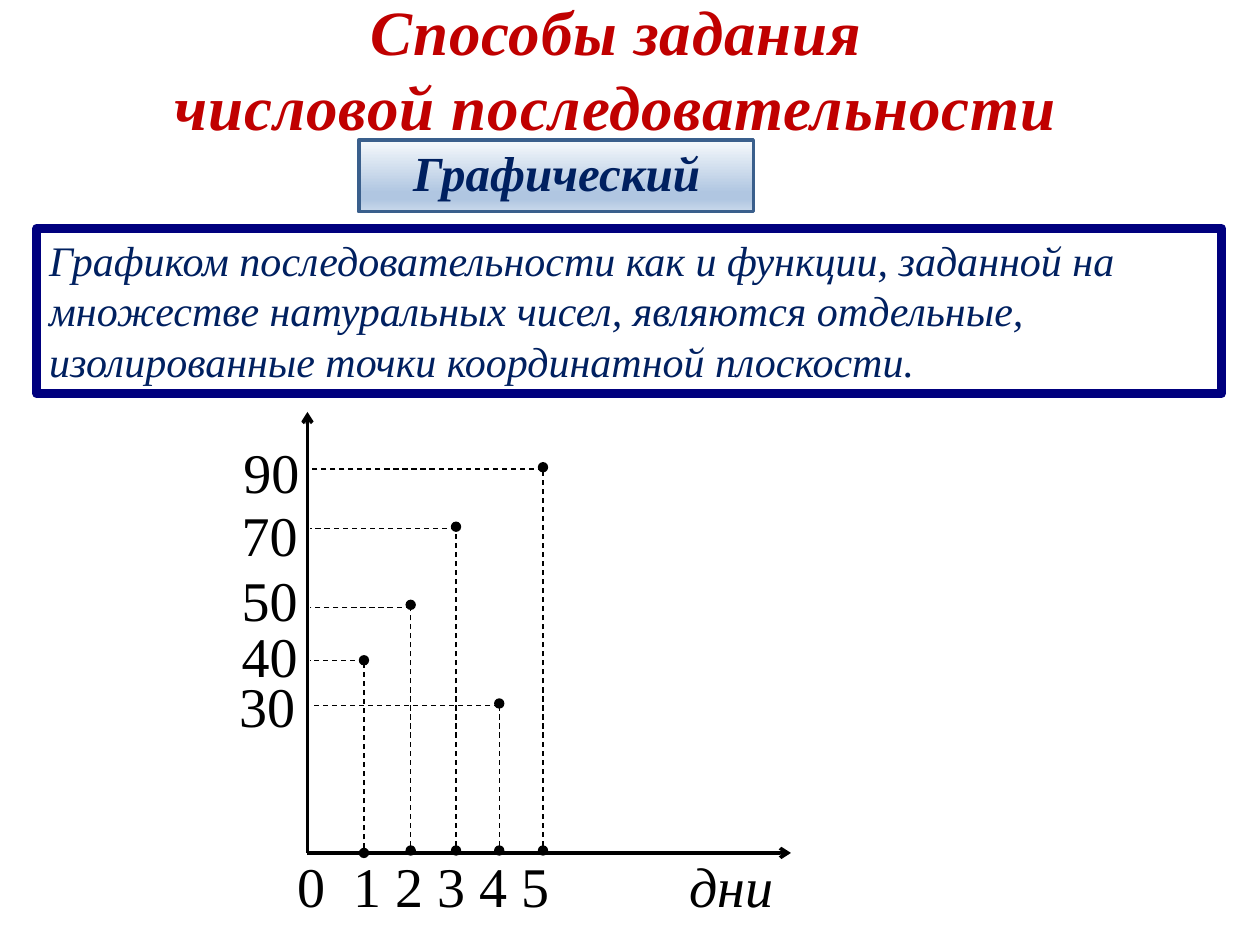
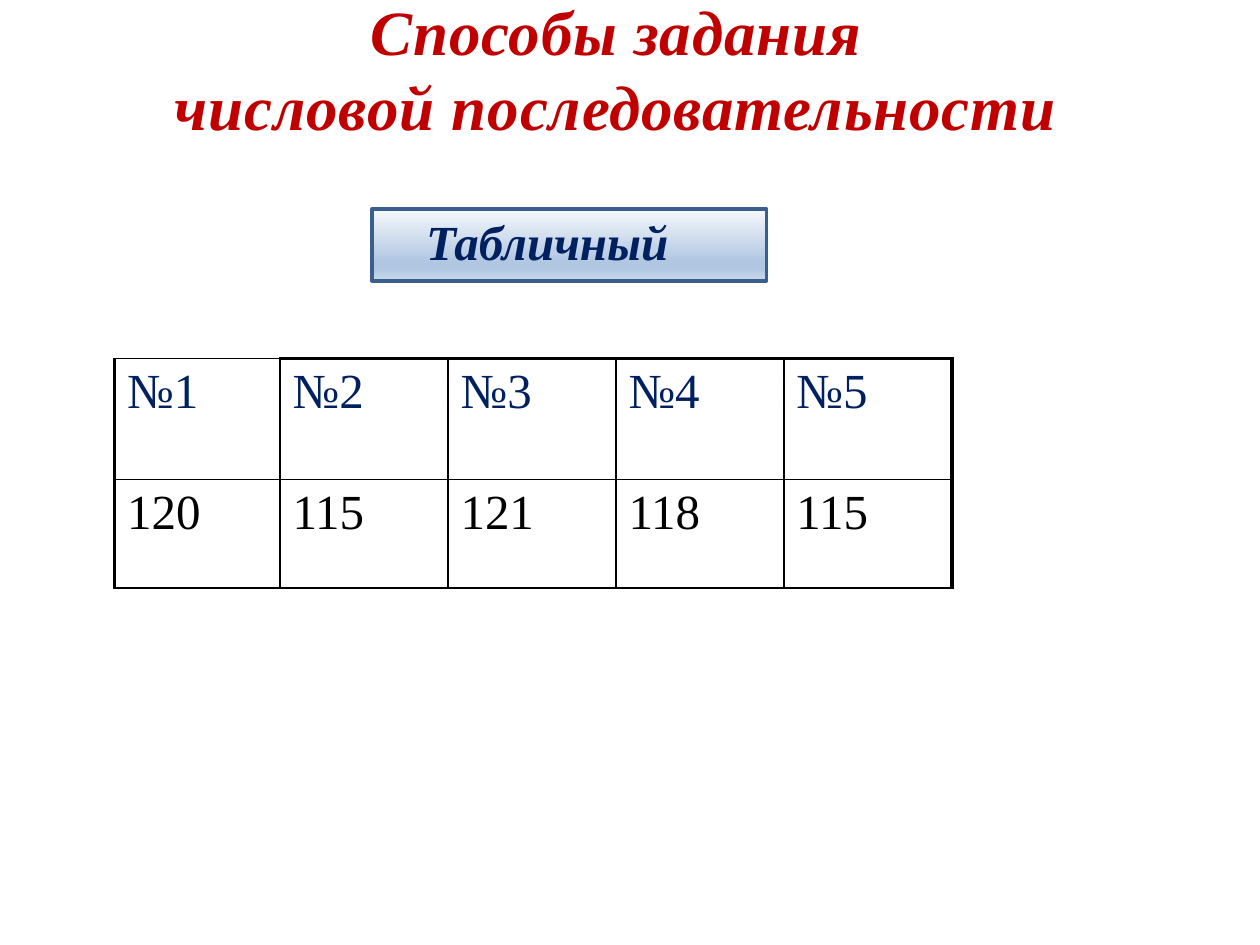
from lxml import etree
from pptx import Presentation
from pptx.dml.color import RGBColor
from pptx.enum.dml import MSO_LINE
from pptx.enum.shapes import MSO_CONNECTOR, MSO_SHAPE
from pptx.enum.text import MSO_ANCHOR, MSO_AUTO_SIZE, PP_ALIGN
from pptx.oxml.ns import qn
from pptx.util import Pt

RECTANGLE = MSO_SHAPE.RECTANGLE
STRAIGHT = MSO_CONNECTOR.STRAIGHT
DASH = MSO_LINE.DASH
TOP = MSO_ANCHOR.TOP
NO_AUTOFIT = MSO_AUTO_SIZE.NONE
CENTER, LEFT = PP_ALIGN.CENTER, PP_ALIGN.LEFT

FONT = "Times New Roman"
RED = RGBColor(0xC0, 0x00, 0x00)
NAVY = RGBColor(0x00, 0x20, 0x60)
FRAME_BLUE = RGBColor(0x00, 0x00, 0x7E)
BADGE_LINE = RGBColor(0x3A, 0x5F, 0x8C)
BLACK = RGBColor(0x00, 0x00, 0x00)
WHITE = RGBColor(0xFF, 0xFF, 0xFF)
BADGE_STOPS = [(0, "F6F9FC"), (74, "B0C6E1"), (83, "B0C6E1"), (100, "CAD9EB")]


def style(para, size, color, bold=False, italic=False, align=LEFT):
    para.alignment = align
    font = para.font
    font.name, font.size, font.bold, font.italic = FONT, Pt(size), bold, italic
    font.color.rgb = color


def add_line(page, start, end, width, dashed=False, head=None, tail=None):
    line = page.shapes.add_connector(STRAIGHT, *[Pt(value) for value in (*start, *end)])
    line.line.color.rgb = BLACK
    line.line.width = Pt(width)
    if dashed:
        line.line.dash_style = DASH
    properties = line._element.spPr
    outline = properties.find(qn("a:ln"))
    for tag, kind in (("a:headEnd", head), ("a:tailEnd", tail)):
        if kind:
            etree.SubElement(outline, qn(tag), type=kind)
    etree.SubElement(properties, qn("a:effectLst"))


deck = Presentation()
deck.slide_width, deck.slide_height = Pt(720), Pt(540)

# Shared title and gradient badge
pages = []
for method, left, top in [("Графический", 205, 80), ("Табличный", 212.5, 119.5)]:
    page = deck.slides.add_slide(deck.slide_layouts[5])
    pages.append(page)

    title = page.shapes.title
    title.left, title.top, title.width, title.height = Pt(88.5), Pt(-8), Pt(527), Pt(94.5)
    frame = title.text_frame
    frame.text = "Способы задания\nчисловой последовательности"
    frame.auto_size = NO_AUTOFIT
    frame.word_wrap = False
    frame.vertical_anchor = TOP
    for para in frame.paragraphs:
        style(para, 36, RED, bold=True, italic=True, align=CENTER)
        para._p.pPr.find(qn("a:defRPr")).set("spc", "50")

    badge = page.shapes.add_shape(RECTANGLE, Pt(left), Pt(top), Pt(225.5), Pt(41))
    badge.shadow.inherit = False
    badge.line.color.rgb = BADGE_LINE
    badge.line.width = Pt(2)
    badge.fill.gradient()
    badge.fill.gradient_angle = 270
    stops = badge._element.spPr.find(".//" + qn("a:gsLst"))
    stops.clear()
    for position, color in BADGE_STOPS:
        stop = etree.SubElement(stops, qn("a:gs"), pos=str(position * 1000))
        etree.SubElement(stop, qn("a:srgbClr"), val=color)
    frame = badge.text_frame
    frame.text = method
    frame.word_wrap = True
    frame.vertical_anchor = TOP
    frame.margin_left, frame.margin_top = Pt(31), Pt(1.5)
    style(frame.paragraphs[0], 28, NAVY, bold=True, italic=True)

graph_page, table_page = pages

# Definition of the graph
definition = graph_page.shapes.add_shape(RECTANGLE, Pt(21), Pt(130.5), Pt(677), Pt(94.5))
definition.shadow.inherit = False
definition.fill.solid()
definition.fill.fore_color.rgb = WHITE
definition.line.color.rgb = FRAME_BLUE
definition.line.width = Pt(5)
frame = definition.text_frame
frame.text = (
    "Графиком последовательности как и функции, заданной на множестве "
    "натуральных чисел, являются отдельные, изолированные точки "
    "координатной плоскости."
)
frame.word_wrap = True
frame.vertical_anchor = TOP
style(frame.paragraphs[0], 24, NAVY, italic=True)

# Axes
origin = (175.7, 487.4)
add_line(graph_page, origin, (175.7, 235.4), 2, tail="arrow")
add_line(graph_page, origin, (452, 487.4), 2, tail="arrow")

# Points: day position, foot on the axis, dot height, guide height
points = [
    (208, 487.4, 377.3, 377.3),
    (234.7, 486, 345.6, 347),
    (260.6, 486, 301, 302),
    (285.3, 486, 402, 403),
    (310.3, 486, 267, 268),
]
for day, foot, dot, guide in points:
    add_line(graph_page, (day, foot), (day, dot), 0.75, True, "oval", "oval")
    add_line(graph_page, (day, guide), (177, guide), 0.75, True)

# Value labels: text, left, top, width
labels = [
    ("90", 132, 246.2, 65),
    ("70", 131, 282.5, 47.5),
    ("50", 131, 319.7, 52.5),
    ("40", 131, 351.4, 58),
    ("30", 129.6, 380.2, 52),
]
for value, left, top, width in labels:
    box = graph_page.shapes.add_textbox(Pt(left), Pt(top), Pt(width), Pt(45.5))
    box.text_frame.word_wrap = True
    box.text_frame.text = value
    style(box.text_frame.paragraphs[0], 32, BLACK)

# Day labels
box = graph_page.shapes.add_textbox(Pt(162.7), Pt(483), Pt(310), Pt(45.5))
box.text_frame.word_wrap = True
para = box.text_frame.paragraphs[0]
tabs = etree.SubElement(para._p.get_or_add_pPr(), qn("a:tabLst"))
for position in (32, 224):
    etree.SubElement(tabs, qn("a:tab"), pos=str(Pt(position)), algn="l")
para.add_run().text = "0\t1 2 3 4 5\t"
span = para.add_run()
span.text = "дни"
span.font.italic = True
style(para, 32, BLACK)

# Table of values
rows = [["№1", "№2", "№3", "№4", "№5"], ["120", "115", "121", "118", "115"]]
last = len(rows[0]) - 1
table = table_page.shapes.add_table(
    len(rows), len(rows[0]), Pt(65.5), Pt(205), Pt(478.5), Pt(131)
).table
table.first_row = table.horz_banding = False
for index, column in enumerate(table.columns):
    column.width = Pt(96 if index else 94.5)
table.rows[0].height, table.rows[1].height = Pt(69), Pt(62)
for row, values in enumerate(rows):
    for column, value in enumerate(values):
        cell = table.cell(row, column)
        cell.text = value
        style(cell.text_frame.paragraphs[0], 28, BLACK if row else NAVY)
        thick = {"L": column == 0, "R": column == last, "T": row == 0 and column > 0, "B": False}
        properties = cell._tc.get_or_add_tcPr()
        for side, is_thick in thick.items():
            width = Pt(2.25 if is_thick else 1)
            border = etree.SubElement(properties, qn("a:ln" + side), w=str(width))
            fill = etree.SubElement(border, qn("a:solidFill"))
            etree.SubElement(fill, qn("a:srgbClr"), val=str(BLACK))
        cell.fill.background()

deck.save("out.pptx")
